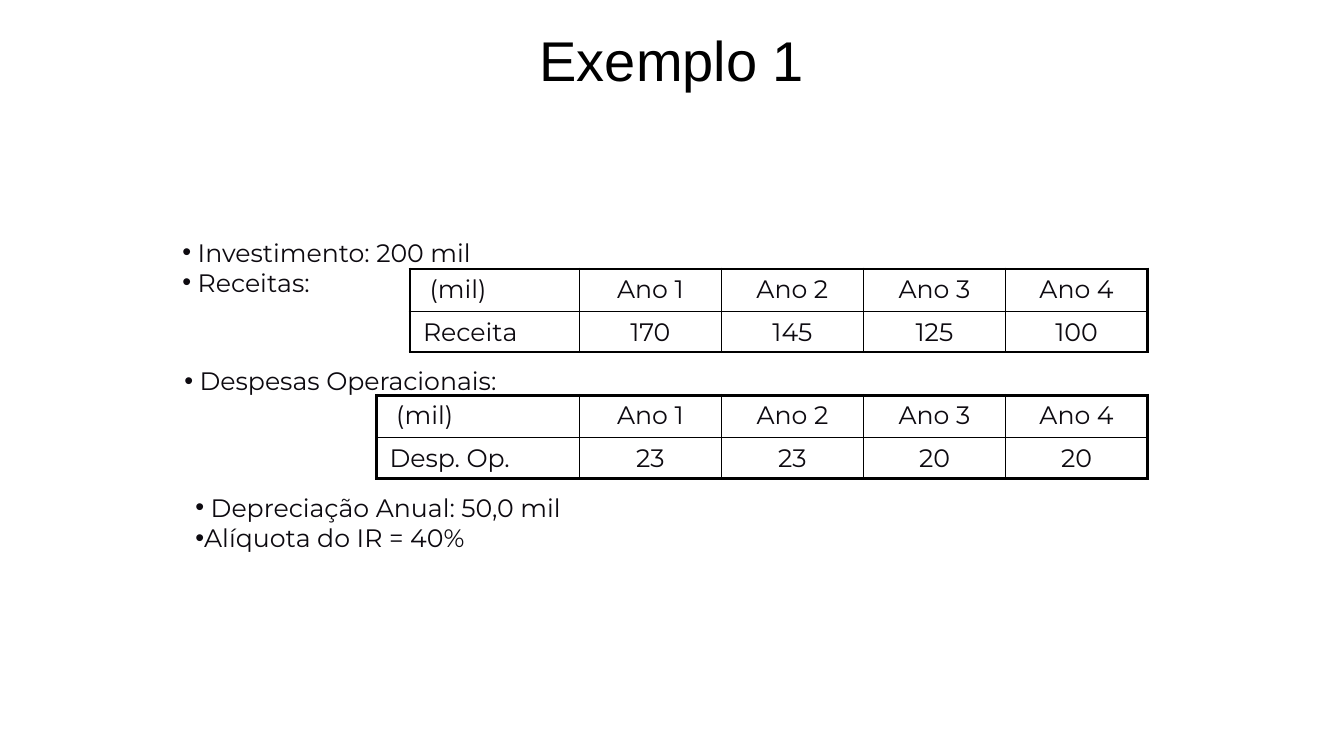
from pptx import Presentation
from pptx.dml.color import RGBColor
from pptx.enum.text import MSO_ANCHOR, MSO_AUTO_SIZE, PP_ALIGN
from pptx.oxml import parse_xml
from pptx.oxml.ns import nsdecls
from pptx.util import Cm, Pt

INK = "0D0A10"
BLACK = "000000"
THIN, THICK = 1, 2.25
BODY = {"name": "Montserrat", "size": Pt(18), "bold": False}
HEAD = {"name": "Arial", "size": Pt(40)}
FRAME = {"word_wrap": False, "auto_size": MSO_AUTO_SIZE.SHAPE_TO_FIT_TEXT,
         "vertical_anchor": MSO_ANCHOR.TOP}
PLAIN = {"first_row": False, "horz_banding": False}
INSET = {"margin_left": Cm(0.33), "margin_right": Cm(0.33),
         "margin_top": Cm(0.13), "margin_bottom": Cm(0.13)}
RIGHT, YEAR = 28.92, 3.58
ROWS = (1.07, 1.02)
YEARS = [f"Ano {n}" for n in range(1, 5)]


def apply(item, values):
    for key, value in values.items():
        setattr(item, key, value)


def paint(font, color):
    font.color.rgb = RGBColor.from_string(color)


def place(shape, left, top, width, height):
    apply(shape, {"left": Cm(left), "top": Cm(top),
                  "width": Cm(width), "height": Cm(height)})


def add_title(shape, text):
    place(shape, 1.69, 0, 30.48, 3)
    frame = shape.text_frame
    frame.text = text
    frame.vertical_anchor = MSO_ANCHOR.MIDDLE
    para = frame.paragraphs[0]
    para.alignment = PP_ALIGN.CENTER
    apply(para.font, HEAD)
    paint(para.font, BLACK)


def add_list(shape, box, lines):
    place(shape, *box)
    frame = shape.text_frame
    apply(frame, FRAME)
    frame.text = "\n".join(lines)
    for para in frame.paragraphs:
        props = para._p.get_or_add_pPr()
        props.set("marL", "0")
        props.set("indent", "0")
        props.append(parse_xml(f'<a:buChar {nsdecls("a")} char="•"/>'))
        para.space_before = Pt(0)
        apply(para.font, BODY)
        paint(para.font, INK)


def add_edges(cell, widths):
    """Draw the left, right, top and bottom borders, in points."""
    props = cell._tc.get_or_add_tcPr()
    for spot, (side, width) in enumerate(zip("LRTB", widths)):
        props.insert(spot, parse_xml(
            f'<a:ln{side} {nsdecls("a")} w="{Pt(width)}"><a:solidFill>'
            f'<a:srgbClr val="{BLACK}"/></a:solidFill></a:ln{side}>'))


def add_grid(slide, top, first, label, values):
    """Add a table of years whose right edge is shared by all tables."""
    data = [[" (mil)", *YEARS], [label, *values]]
    widths = [first] + [YEAR] * len(YEARS)
    total = sum(widths)
    table = slide.shapes.add_table(
        len(data), len(widths), Cm(RIGHT - total), Cm(top),
        Cm(total), Cm(sum(ROWS))).table
    apply(table, PLAIN)
    for col, width in zip(table.columns, widths):
        col.width = Cm(width)
    for row, height in zip(table.rows, ROWS):
        row.height = Cm(height)
    for r, line in enumerate(data):
        for c, text in enumerate(line):
            cell = table.cell(r, c)
            cell.text = text
            apply(cell, INSET)
            cell.fill.background()
            outer = (c == 0, c == len(line) - 1, r == 0, r == len(data) - 1)
            add_edges(cell, [THICK if edge else THIN for edge in outer])
            para = cell.text_frame.paragraphs[0]
            para.alignment = PP_ALIGN.CENTER if c else PP_ALIGN.LEFT
            apply(para.font, BODY)
            paint(para.font, INK)


def main():
    deck = Presentation()
    apply(deck, {"slide_width": Cm(33.87), "slide_height": Cm(19.05)})
    slide = deck.slides.add_slide(deck.slide_layouts.get_by_name("Comparison"))
    title, income, costs, taxes, spare = slide.placeholders
    spare.element.getparent().remove(spare.element)

    add_title(title, "Exemplo 1")
    add_list(income, (4.34, 5.84, 8.56, 1.8),
             [" Investimento: 200 mil", " Receitas:"])
    add_grid(slide, 6.78, 4.27, "Receita", ["170", "145", "125", "100"])
    add_list(costs, (4.39, 9.09, 9.45, 1.02), [" Despesas Operacionais:"])
    add_grid(slide, 9.96, 5.11, "Desp. Op.", ["23", "23", "20", "20"])
    add_list(taxes, (4.67, 12.27, 10.85, 1.8),
             [" Depreciação Anual: 50,0 mil", "Alíquota do IR = 40%"])
    deck.save("out.pptx")


if __name__ == "__main__":
    main()
